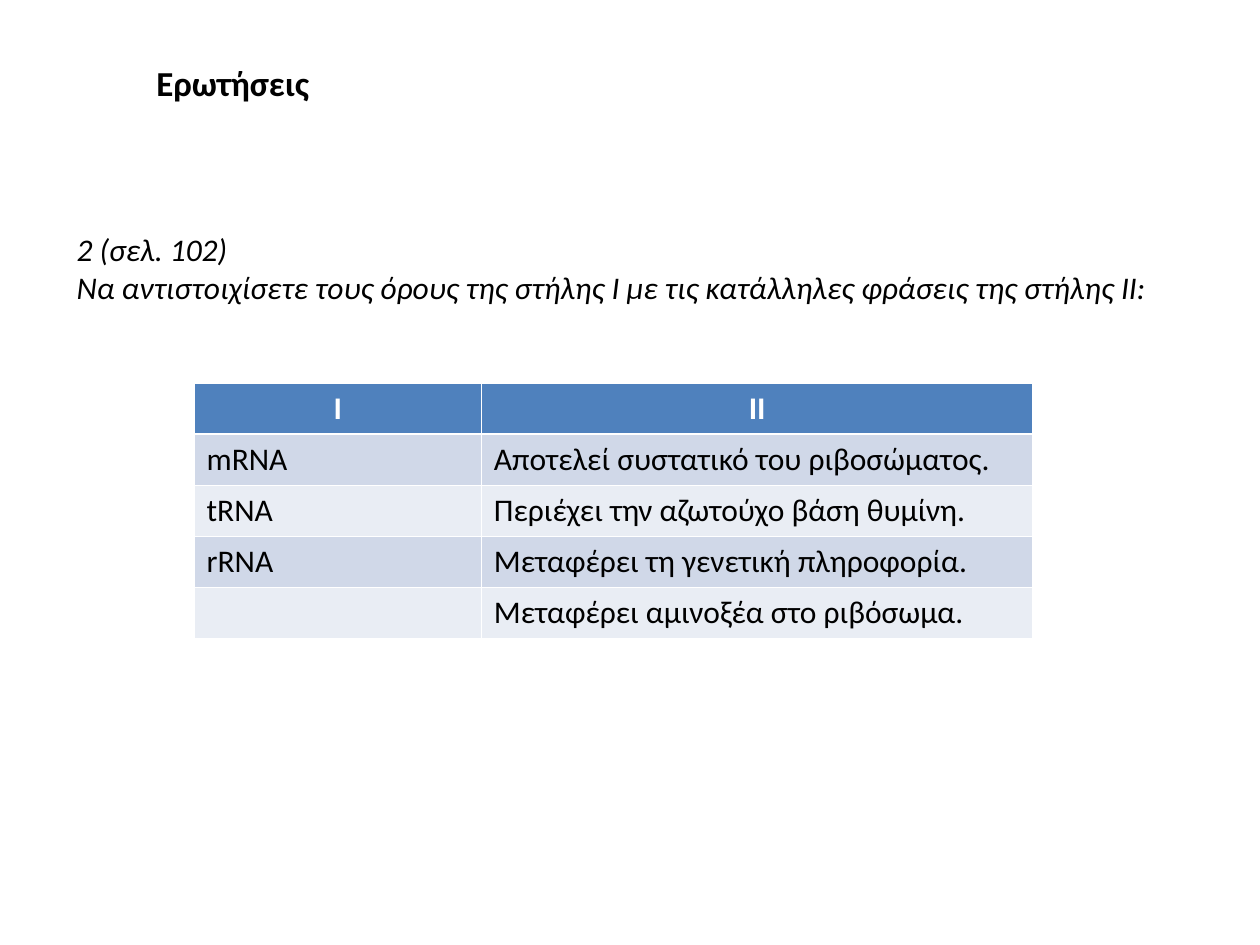
import pptx
import pptx.dml.color
import pptx.enum.text
import pptx.util
from pptx.util import Inches

FONT = "Calibri"
BLACK = pptx.dml.color.RGBColor(0x00, 0x00, 0x00)
WHITE = pptx.dml.color.RGBColor(0xFF, 0xFF, 0xFF)
HEADER_BLUE = pptx.dml.color.RGBColor(0x4F, 0x81, 0xBD)
BANDS = (
    pptx.dml.color.RGBColor(0xD0, 0xD8, 0xE8),
    pptx.dml.color.RGBColor(0xE9, 0xED, 0xF4),
)

TITLE = "Ερωτήσεις"
QUESTION = [
    "2 (σελ. 102)",
    "Να αντιστοιχίσετε τους όρους της στήλης Ι με τις κατάλληλες φράσεις της στήλης ΙΙ:",
]
MATCHING_ROWS = [
    ("I", "II"),
    ("mRNA", "Αποτελεί συστατικό του ριβοσώματος."),
    ("tRNA", "Περιέχει την αζωτούχο βάση θυμίνη."),
    ("rRNA", "Μεταφέρει τη γενετική πληροφορία."),
    ("", "Μεταφέρει αμινοξέα στο ριβόσωμα."),
]


def format_paragraph(paragraph, size, color=BLACK, bold=False, italic=False,
                     alignment=pptx.enum.text.PP_ALIGN.LEFT):
    paragraph.alignment = alignment
    font = paragraph.font
    font.name = FONT
    font.size = pptx.util.Pt(size)
    font.bold = bold
    font.italic = italic
    font.color.rgb = color


def place_title(slide, left, top, width, height):
    title = slide.shapes.title
    title.left, title.top, title.width, title.height = left, top, width, height
    frame = title.text_frame
    frame.text = TITLE
    frame.word_wrap = False
    frame.auto_size = pptx.enum.text.MSO_AUTO_SIZE.SHAPE_TO_FIT_TEXT
    frame.vertical_anchor = pptx.enum.text.MSO_ANCHOR.TOP
    format_paragraph(frame.paragraphs[0], 20, bold=True)


def add_question(slide, left, top, width, height):
    frame = slide.shapes.add_textbox(left, top, width, height).text_frame
    frame.word_wrap = True
    frame.auto_size = pptx.enum.text.MSO_AUTO_SIZE.SHAPE_TO_FIT_TEXT
    frame.text = "\n".join(QUESTION)
    for paragraph in frame.paragraphs:
        format_paragraph(paragraph, 18, italic=True)


def add_matching_table(slide, left, top, width, height):
    """Add the two-column table; its default style draws the white borders."""
    table = slide.shapes.add_table(
        len(MATCHING_ROWS), 2, left, top, width, height).table
    terms_width = Inches(2.28)
    table.columns[0].width = terms_width
    table.columns[1].width = width - terms_width
    for row_index, texts in enumerate(MATCHING_ROWS):
        is_header = row_index == 0
        for column_index, text in enumerate(texts):
            cell = table.cell(row_index, column_index)
            cell.fill.solid()
            cell.fill.fore_color.rgb = (
                HEADER_BLUE if is_header else BANDS[(row_index - 1) % 2])
            cell.text = text
            paragraph = cell.text_frame.paragraphs[0]
            if is_header:
                format_paragraph(paragraph, 18, WHITE, bold=True,
                                 alignment=pptx.enum.text.PP_ALIGN.CENTER)
            else:
                format_paragraph(paragraph, 18)


def main():
    presentation = pptx.Presentation()
    presentation.slide_width = Inches(10)
    presentation.slide_height = Inches(7.5)
    title_only = presentation.slide_layouts[5]
    slide = presentation.slides.add_slide(title_only)
    place_title(slide, Inches(1.14), Inches(0.44), Inches(1.43), Inches(0.44))
    add_question(slide, Inches(0.51), Inches(1.78), Inches(8.74), Inches(0.71))
    add_matching_table(slide, Inches(1.54), Inches(3.04), Inches(6.66), Inches(2.03))
    presentation.save("out.pptx")


if __name__ == "__main__":
    main()
